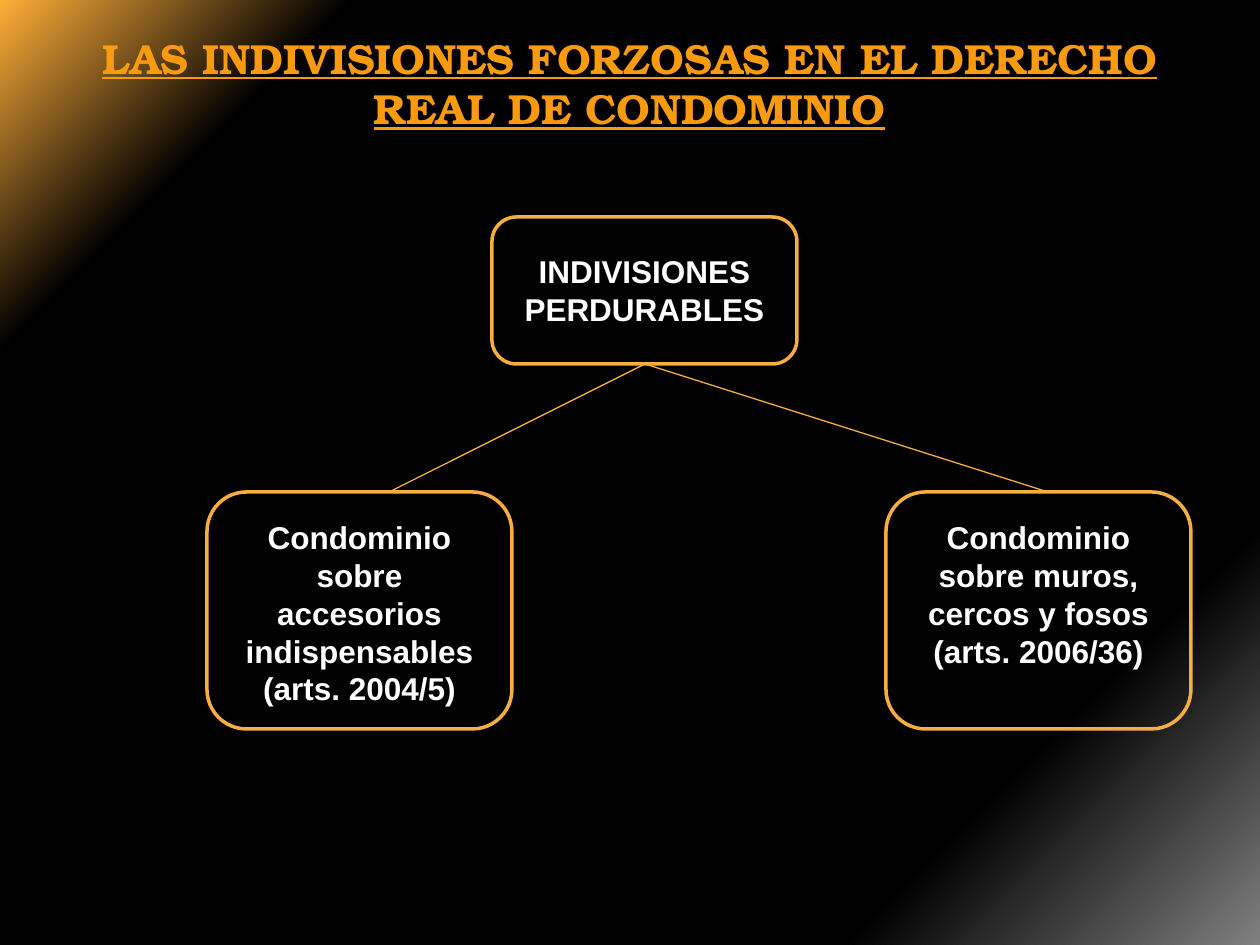
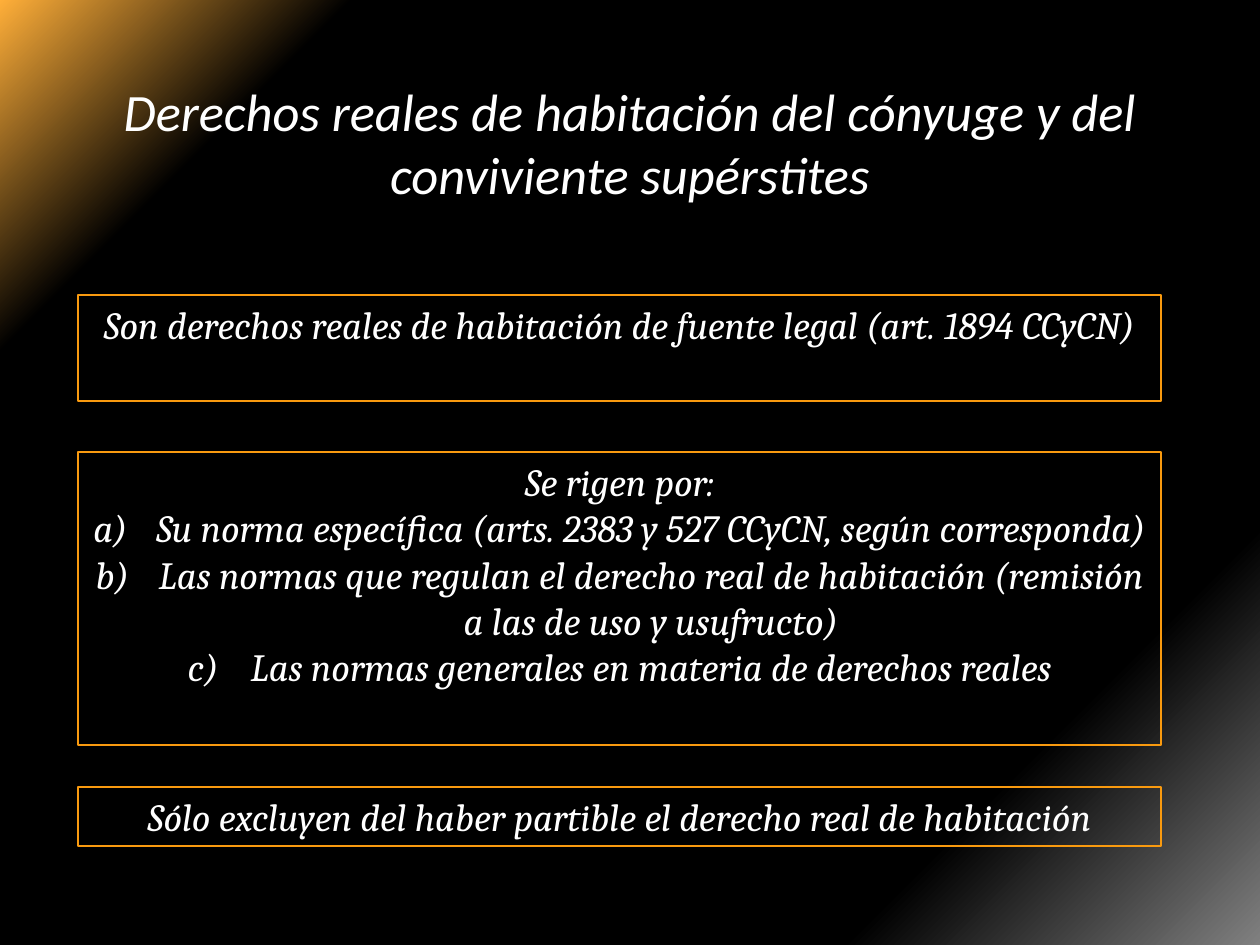
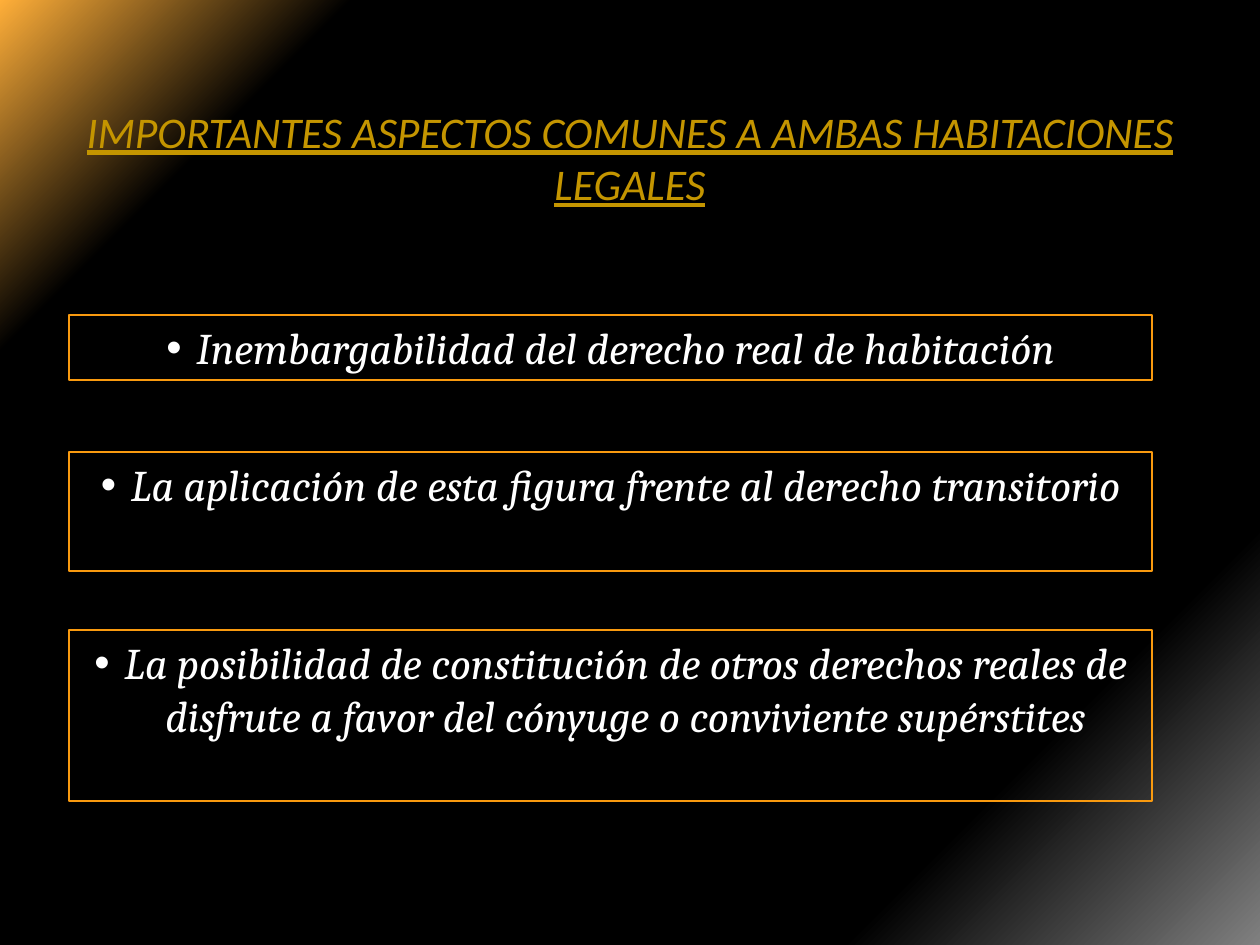
from lxml import etree
from pptx import Presentation
from pptx.dml.color import RGBColor
from pptx.enum import shapes, text
from pptx.oxml.ns import qn
from pptx.util import Emu, Pt

EMU_PER_PX = 914400 / 126

WHITE = RGBColor(0xFF, 0xFF, 0xFF)
ORANGE = RGBColor(0xF9, 0x9A, 0x0F)
AMBER = RGBColor(0xF7, 0xAD, 0x41)
GOLD = RGBColor(0xC4, 0x95, 0x00)
BLACK = RGBColor(0x00, 0x00, 0x00)
GLOW = RGBColor(0xFF, 0xAF, 0x39)
GREY = RGBColor(0x80, 0x80, 0x80)

BACKDROP = [(0, GLOW), (16, BLACK), (81, BLACK), (100, GREY)]

# Text formats
HEADING = dict(name="TeX Gyre Bonum", size=Pt(24), bold=True, underline=True, color=ORANGE)
NODE = dict(name="Arial", size=Pt(18), bold=True, color=WHITE)
TOPIC = dict(name="Calibri", size=Pt(30), italic=True, color=WHITE)
ASPECTS = dict(name="Calibri", size=Pt(25), italic=True, underline=True, color=GOLD)
RULE = dict(name="Cambria", size=Pt(22), italic=True, color=WHITE)
ASPECT = dict(RULE, size=Pt(25))

# Bullet kinds: hanging indent in px, tag and attributes
LETTERED = (63, "a:buAutoNum", {"type": "alphaLcParenR"})
DOTTED = (30, "a:buChar", {"char": "•"})

NODE_WIDTH = 305
NODE_PAD = 20


def px(*lengths):
    return [Emu(round(length * EMU_PER_PX)) for length in lengths]


def paint_backdrop(master):
    fill = master.background.fill
    fill.gradient()
    fill.gradient_angle = 315
    stops = master.element.find(".//" + qn("a:gsLst"))
    for stop in list(stops):
        stops.remove(stop)
    for percent, color in BACKDROP:
        stop = etree.SubElement(stops, qn("a:gs"), pos=str(percent * 1000))
        etree.SubElement(stop, qn("a:srgbClr"), val=str(color))


def add_bullet(paragraph, bullet):
    indent, tag, attributes = bullet
    hanging = px(indent)[0]
    properties = paragraph._p.get_or_add_pPr()
    properties.set("marL", str(hanging))
    properties.set("indent", str(-hanging))
    if tag == "a:buChar":
        etree.SubElement(properties, qn("a:buFont"), typeface="Arial")
    etree.SubElement(properties, qn(tag), attributes)


def write(frame, lines, style, anchor=text.MSO_ANCHOR.TOP):
    """Fill a frame with (wording, bullet) lines in one style."""
    frame.word_wrap = True
    frame.vertical_anchor = anchor
    for index, (wording, bullet) in enumerate(lines):
        paragraph = frame.add_paragraph() if index else frame.paragraphs[0]
        paragraph.alignment = text.PP_ALIGN.CENTER
        if bullet:
            add_bullet(paragraph, bullet)
        run = paragraph.add_run()
        run.text = wording
        for key, value in style.items():
            if key == "color":
                run.font.color.rgb = value
            else:
                setattr(run.font, key, value)


def add_text(slide, place, wording, style, anchor=text.MSO_ANCHOR.TOP):
    label = slide.shapes.add_textbox(*px(*place))
    write(label.text_frame, [(wording, None)], style, anchor)


def add_outline(slide, kind, place, color, width):
    outline = slide.shapes.add_shape(kind, *px(*place))
    outline.shadow.inherit = False
    outline.fill.background()
    outline.line.color.rgb = color
    outline.line.width = Pt(width)
    return outline


def add_node(slide, left, top, height, text_top, wording):
    place = (left, top, NODE_WIDTH, height)
    add_outline(slide, shapes.MSO_SHAPE.ROUNDED_RECTANGLE, place, AMBER, 2)
    inner = (left + NODE_PAD, text_top, NODE_WIDTH - 2 * NODE_PAD, height - 2 * NODE_PAD)
    add_text(slide, inner, wording, NODE)


def add_branch(slide, start, end):
    branch = slide.shapes.add_connector(shapes.MSO_CONNECTOR.STRAIGHT, *px(*start, *end))
    branch.line.color.rgb = AMBER
    branch.line.width = Pt(0.75)
    etree.SubElement(branch._element.spPr, qn("a:effectLst"))


def add_panels(slide, left, panels, style):
    for top, height, lines in panels:
        panel = add_outline(slide, shapes.MSO_SHAPE.RECTANGLE,
                            (left, top, 1083, height), ORANGE, 0.75)
        write(panel.text_frame, lines, style)


def build_indivisions(slide):
    add_text(slide, (34, 26, 1191, 115),
             "LAS INDIVISIONES FORZOSAS EN EL DERECHO REAL DE CONDOMINIO", HEADING)
    add_node(slide, 492, 217, 147, 246, "INDIVISIONES PERDURABLES")
    children = [
        (207, 389, "Condominio sobre accesorios indispensables (arts. 2004/5)"),
        (886, 1048, "Condominio sobre muros, cercos y fosos (arts. 2006/36)"),
    ]
    for left, branch_end, wording in children:
        add_branch(slide, (645, 364), (branch_end, 492))
        add_node(slide, left, 492, 237, 512, wording)


def build_legal_habitation(slide):
    add_text(slide, (63, 38, 1134, 208),
             "Derechos reales de habitación del cónyuge y del conviviente supérstites",
             TOPIC, text.MSO_ANCHOR.MIDDLE)
    add_panels(slide, 78, [
        (295, 106, [("Son derechos reales de habitación de fuente legal (art. 1894 CCyCN)", None)]),
        (452, 293, [
            ("Se rigen por:", None),
            ("Su norma específica (arts. 2383 y 527 CCyCN, según corresponda)", LETTERED),
            ("Las normas que regulan el derecho real de habitación "
             "(remisión a las de uso y usufructo)", LETTERED),
            ("Las normas generales en materia de derechos reales", LETTERED),
        ]),
        (787, 59, [("Sólo excluyen del haber partible el derecho real de habitación", None)]),
    ], RULE)


def build_common_aspects(slide):
    add_text(slide, (63, 38, 1134, 238),
             "IMPORTANTES ASPECTOS COMUNES A AMBAS HABITACIONES LEGALES",
             ASPECTS, text.MSO_ANCHOR.MIDDLE)
    add_panels(slide, 69, [
        (315, 65, [("Inembargabilidad del derecho real de habitación", DOTTED)]),
        (452, 119, [("La aplicación de esta figura frente al derecho transitorio", DOTTED)]),
        (630, 171, [("La posibilidad de constitución de otros derechos reales de "
                     "disfrute a favor del cónyuge o conviviente supérstites", DOTTED)]),
    ], ASPECT)


def main():
    deck = Presentation()
    deck.slide_width, deck.slide_height = px(1260, 945)
    paint_backdrop(deck.slide_master)
    blank = deck.slide_layouts[6]
    for build in (build_indivisions, build_legal_habitation, build_common_aspects):
        build(deck.slides.add_slide(blank))
    deck.save("out.pptx")


if __name__ == "__main__":
    main()
